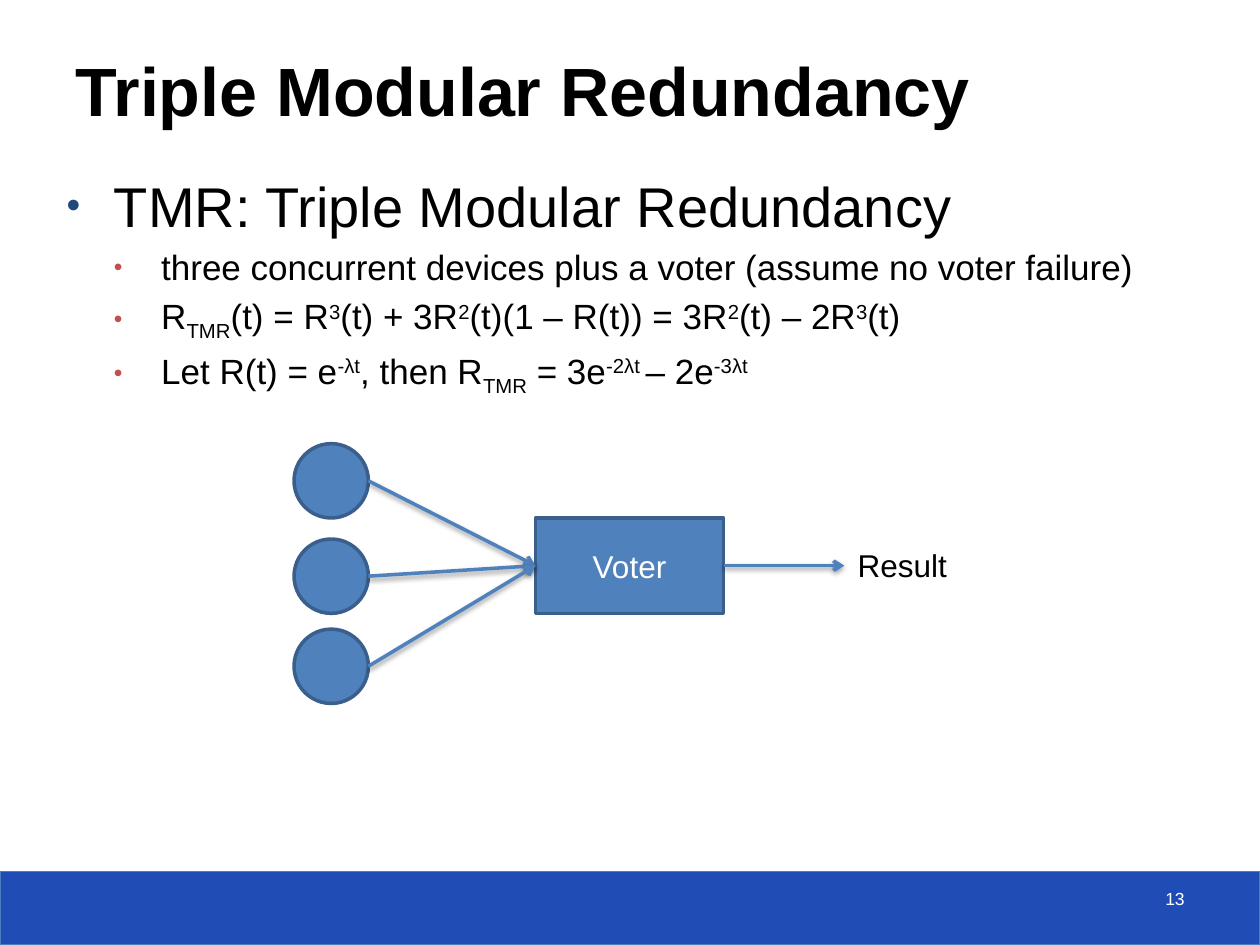
from lxml.etree import SubElement
from pptx import Presentation
from pptx.dml.color import RGBColor
from pptx.enum.shapes import MSO_CONNECTOR, MSO_SHAPE
from pptx.enum.text import MSO_ANCHOR, PP_ALIGN
from pptx.oxml.ns import qn
from pptx.util import Pt

BLACK = RGBColor(0x00, 0x00, 0x00)
WHITE = RGBColor(0xFF, 0xFF, 0xFF)
BAR_BLUE = RGBColor(0x20, 0x4D, 0xB5)
BAR_EDGE = RGBColor(0x4B, 0x7E, 0xBC)
DEVICE_BLUE = RGBColor(0x4F, 0x81, 0xBD)
DEVICE_EDGE = RGBColor(0x3A, 0x5F, 0x8C)
NAVY = RGBColor(0x1F, 0x49, 0x7D)
RED = RGBColor(0xC0, 0x50, 0x4D)

SUB, SUPER = -25, 30
POINTS = [
    (0, ["TMR: Triple Modular Redundancy"]),
    (1, ["three concurrent devices plus a voter (assume no voter failure)"]),
    (1, ["R", ("TMR", SUB), "(t) = R", ("3", SUPER), "(t) + 3R", ("2", SUPER),
         "(t)(1 – R(t)) = 3R", ("2", SUPER), "(t) – 2R", ("3", SUPER), "(t)"]),
    (1, ["Let R(t) = e", ("-λt", SUPER), ", then R", ("TMR", SUB), " = 3e",
         ("-2λt ", SUPER), "– 2e", ("-3λt", SUPER)]),
]
LEVELS = [(32, NAVY), (20, RED)]


def write(paragraph, pieces, size=18, color=BLACK, bold=False, align=PP_ALIGN.LEFT):
    """Fill a paragraph with plain pieces and (text, baseline percent) pairs."""
    paragraph.alignment = align
    for piece in pieces:
        text, baseline = (piece, 0) if isinstance(piece, str) else piece
        run = paragraph.add_run()
        run.text = text
        run.font.name = "Arial"
        run.font.size = Pt(size)
        run.font.bold = bold
        run.font.color.rgb = color
        if baseline:
            run.font._element.set("baseline", str(baseline * 1000))


def add_bullet(paragraph, level, color):
    """Give a paragraph a hanging bullet for its level."""
    paragraph.level = level
    props = paragraph._p.get_or_add_pPr()
    props.set("marL", str(Pt(27 * (level + 1))))
    props.set("indent", str(Pt(-27)))
    SubElement(SubElement(props, qn("a:buClr")), qn("a:srgbClr"), val=str(color))
    SubElement(props, qn("a:buSzPct"), val="70000")
    SubElement(props, qn("a:buFont"), typeface="Arial")
    SubElement(props, qn("a:buChar"), char="•")


def add_text(slide, left, top, width, height, text, wrap=True, **style):
    """Add a text box with one line of text."""
    frame = slide.shapes.add_textbox(Pt(left), Pt(top), Pt(width), Pt(height)).text_frame
    frame.word_wrap = wrap
    write(frame.paragraphs[0], [text], **style)


def add_block(slide, preset, left, top, width, height, fill, edge, edge_width):
    """Add a flat filled and outlined shape."""
    block = slide.shapes.add_shape(preset, Pt(left), Pt(top), Pt(width), Pt(height))
    block.shadow.inherit = False
    block.fill.solid()
    block.fill.fore_color.rgb = fill
    block.line.color.rgb = edge
    block.line.width = Pt(edge_width)
    return block


def add_arrow(slide, start, end):
    """Add a softly shadowed arrow between two points."""
    arrow = slide.shapes.add_connector(MSO_CONNECTOR.STRAIGHT, *map(Pt, start + end))
    arrow.line.color.rgb = DEVICE_BLUE
    arrow.line.width = Pt(2)
    SubElement(arrow.line._get_or_add_ln(), qn("a:tailEnd"), type="arrow")
    effects = SubElement(arrow._element.spPr, qn("a:effectLst"))
    shadow = SubElement(effects, qn("a:outerShdw"), blurRad=str(Pt(3.1)),
                        dist=str(Pt(1.6)), dir="5400000", rotWithShape="0")
    shade = SubElement(shadow, qn("a:srgbClr"), val=str(BLACK))
    SubElement(shade, qn("a:alpha"), val="38000")


def place_title(slide, left, top, width, height):
    """Move and format the title placeholder."""
    title = slide.shapes.title
    title.left, title.top, title.width, title.height = map(Pt, (left, top, width, height))
    title.fill.solid()
    title.fill.fore_color.rgb = WHITE
    veil = title._element.spPr.find(qn("a:solidFill")).find(qn("a:srgbClr"))
    SubElement(veil, qn("a:alpha"), val="75000")
    title.text_frame.vertical_anchor = MSO_ANCHOR.BOTTOM
    write(title.text_frame.paragraphs[0], ["Triple Modular Redundancy"], size=39, bold=True)


def place_points(slide, left, top, width, height):
    """Add the bulleted explanation."""
    frame = slide.shapes.add_textbox(Pt(left), Pt(top), Pt(width), Pt(height)).text_frame
    frame.word_wrap = True
    frame.margin_top = Pt(8)
    for index, (level, pieces) in enumerate(POINTS):
        paragraph = frame.add_paragraph() if index else frame.paragraphs[0]
        size, color = LEVELS[level]
        add_bullet(paragraph, level, color)
        if index:
            paragraph.space_before = Pt(size * 0.2)
        write(paragraph, pieces, size=size)


def place_diagram(slide, left, top):
    """Draw three devices feeding a voter that gives the result."""
    device, voter_width, voter_height = 42.5, 107.5, 54.5
    voter_left, voter_top = left + 138, top + 42.5
    middle = voter_top + voter_height / 2
    device_tops = [top, top + 54.5, top + 106]
    for device_top in device_tops:
        add_block(slide, MSO_SHAPE.OVAL, left, device_top, device, device,
                  DEVICE_BLUE, DEVICE_EDGE, 2)
    voter = add_block(slide, MSO_SHAPE.RECTANGLE, voter_left, voter_top,
                      voter_width, voter_height, DEVICE_BLUE, DEVICE_EDGE, 2)
    voter.text_frame.vertical_anchor = MSO_ANCHOR.MIDDLE
    write(voter.text_frame.paragraphs[0], ["Voter"], color=WHITE, align=PP_ALIGN.CENTER)
    for device_top in device_tops:
        add_arrow(slide, (left + device, device_top + device / 2), (voter_left, middle))
    voter_right = voter_left + voter_width
    add_arrow(slide, (voter_right, middle), (voter_right + 69, middle))
    add_text(slide, voter_right + 69.5, middle - 15, 66, 29, "Result", wrap=False)


def place_footer(slide, left, top, width, height):
    """Add the footer bar and the slide number."""
    add_block(slide, MSO_SHAPE.RECTANGLE, left, top, width, height, BAR_BLUE, BAR_EDGE, 0.75)
    add_text(slide, left + width - 204, top + 6, 168, 24, "13",
             size=10, color=WHITE, align=PP_ALIGN.RIGHT)


def main():
    """Build and save the slide."""
    deck = Presentation()
    deck.slide_width, deck.slide_height = Pt(720), Pt(540)
    slide = deck.slides.add_slide(deck.slide_layouts[5])
    place_footer(slide, 0, 498, 720, 42)
    place_title(slide, 36, 18, 664, 60)
    place_points(slide, 31, 90, 660, 396)
    place_diagram(slide, 168, 253.5)
    deck.save("out.pptx")


if __name__ == "__main__":
    main()
